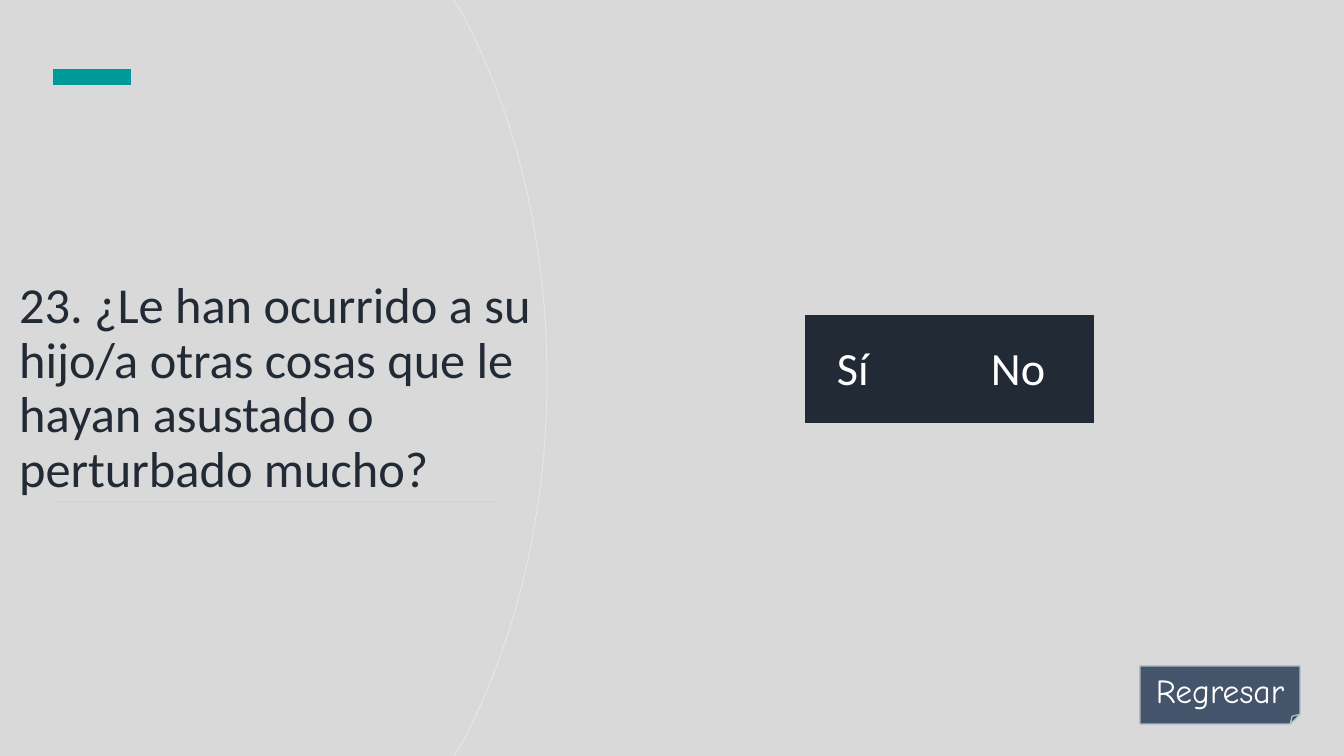
from dataclasses import dataclass

from lxml.etree import SubElement
from pptx import Presentation
from pptx.dml.color import RGBColor as Rgb
from pptx.enum.shapes import MSO_SHAPE as Kind
from pptx.enum.text import MSO_ANCHOR as Anchor, PP_ALIGN as Align
from pptx.oxml.ns import qn
from pptx.util import Emu, Pt

SCALE = 12192000 / 1344  # EMU in one px


@dataclass(frozen=True)
class Theme:
    back: str = "D9D9D9"
    edge: str = "E6E6E6"
    ink: str = "222A35"
    teal: str = "009999"
    rule: str = "D5D5D5"
    slate: str = "44546A"
    rim: str = "ADB9CA"
    white: str = "FFFFFF"
    font: str = "Calibri"
    hand: str = "Comic Neue"
    head: int = 36
    cell: int = 33
    note: int = 24


@dataclass(frozen=True)
class Box:
    x: int
    y: int
    w: int
    h: int
    fill: str
    kind: Kind = Kind.RECTANGLE
    line: str = ""
    width: float = 1
    turn: int = 0


@dataclass(frozen=True)
class Disc:
    right: int
    line: str = ""


T = Theme()
W, H = 1344, 756
DISCS = [Disc(547, T.edge), Disc(546)]
BAR = Box(84, 38, 16, 78, T.teal, turn=90)
RULE = Box(53, 501, 444, 2, T.rule)
BACK = Box(1140, 666, 160, 58, T.slate, Kind.FOLDED_CORNER, T.rim)


def px(n: float) -> Emu:
    return Emu(round(n * SCALE))


def apply(obj, form: dict) -> None:
    for key, val in form.items():
        setattr(obj, key, val)


def place(obj, x: int, y: int, w: int, h: int) -> None:
    apply(obj, dict(left=px(x), top=px(y), width=px(w), height=px(h)))


def paint(shape, fill: str, line: str, width: float) -> None:
    shape.shadow.inherit = False
    shape.fill.solid()
    shape.fill.fore_color.rgb = Rgb.from_string(fill)
    if line:
        shape.line.color.rgb = Rgb.from_string(line)
        shape.line.width = Pt(width)
    else:
        shape.line.fill.background()


def write(frame, text: str, size: int, color: str, font: str = T.font,
          form: dict | None = None) -> None:
    para = frame.paragraphs[0]
    apply(para, form or {})
    run = para.add_run()
    run.text = text
    apply(run.font, dict(name=font, size=Pt(size), bold=False))
    run.font.color.rgb = Rgb.from_string(color)


def draw(slide, box: Box):
    shape = slide.shapes.add_shape(box.kind, 0, 0, 0, 0)
    place(shape, box.x, box.y, box.w, box.h)
    shape.rotation = box.turn
    paint(shape, box.fill, box.line, box.width)
    return shape


def bend(shape, first: int) -> None:
    """Turn three line points, from the given one on, into one curve."""
    lines = list(shape.element.iter(qn("a:lnTo")))[first:first + 3]
    lines[0].tag = qn("a:cubicBezTo")
    for line in lines[1:]:
        lines[0].append(line[0])
        line.getparent().remove(line)


def arc(slide, disc: Disc) -> None:
    r = disc.right
    upper = [(r - 93, 0), (r - 85, 13), (r - 31, 115), (r, 241)]
    lower = [(x, H - y) for x, y in reversed(upper)]
    path = slide.shapes.build_freeform(0, 0, 1.0)
    path.add_line_segments([(px(x), px(y))
                            for x, y in [*upper, (r, H // 2), *lower, (0, H)]])
    shape = path.convert_to_shape()
    for first in (5, 2):  # lower half first, so that the count holds
        bend(shape, first)
    paint(shape, T.back, disc.line, 0.75)


def border(cell, color: str) -> None:
    props = cell._tc.get_or_add_tcPr()
    for side in ("a:lnL", "a:lnR", "a:lnT", "a:lnB"):
        line = SubElement(props, qn(side), w=str(Pt(1.5)))
        if side in ("a:lnL", "a:lnT"):
            fill = SubElement(line, qn("a:solidFill"))
            SubElement(fill, qn("a:srgbClr"), val=color)
        else:
            SubElement(line, qn("a:noFill"))


def choices(slide) -> None:
    names, widths = ["Sí", "No"], [154, 134]
    table = slide.shapes.add_table(1, len(names), px(806), px(316),
                                   px(sum(widths)), px(107)).table
    apply(table, dict(first_row=False, horz_banding=False))
    for i, (name, width) in enumerate(zip(names, widths)):
        table.columns[i].width = px(width)
        cell = table.cell(0, i)
        apply(cell, dict(vertical_anchor=Anchor.MIDDLE, margin_left=px(31),
                         margin_top=px(24), margin_right=px(24),
                         margin_bottom=px(24)))
        border(cell, T.ink)
        cell.fill.solid()
        cell.fill.fore_color.rgb = Rgb.from_string(T.ink)
        write(cell.text_frame, name, T.cell, T.white)


def ask(slide) -> None:
    title = slide.shapes.title
    title.element.getparent().append(title.element)  # in front of the discs
    place(title, 9, 117, 538, 386)
    apply(title.text_frame, dict(word_wrap=True, vertical_anchor=Anchor.BOTTOM))
    write(title.text_frame, "23. ¿Le han ocurrido a su hijo/a otras cosas que "
          "le hayan asustado o perturbado mucho?", T.head, T.ink,
          form=dict(alignment=Align.LEFT, line_spacing=0.9))


def main() -> None:
    deck = Presentation()
    apply(deck, dict(slide_width=px(W), slide_height=px(H)))
    slide = deck.slides.add_slide(deck.slide_layouts[5])
    slide.background.fill.solid()
    slide.background.fill.fore_color.rgb = Rgb.from_string(T.back)

    # Backdrop
    for disc in DISCS:
        arc(slide, disc)

    # Question with its accents
    ask(slide)
    draw(slide, BAR)
    draw(slide, RULE)

    # Answers
    choices(slide)

    # Return button
    frame = draw(slide, BACK).text_frame
    apply(frame, dict(word_wrap=True, vertical_anchor=Anchor.MIDDLE))
    write(frame, "Regresar", T.note, T.white, T.hand,
          dict(alignment=Align.CENTER))

    deck.save("out.pptx")


if __name__ == "__main__":
    main()
